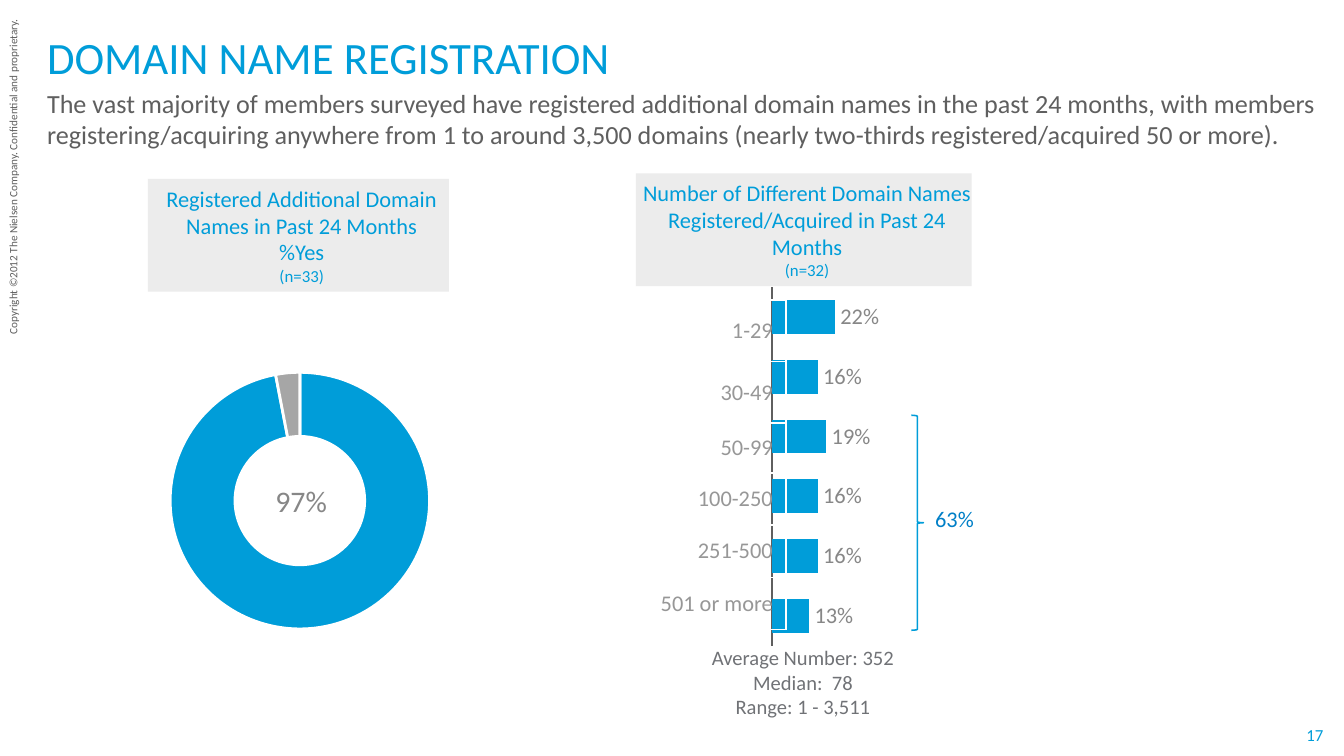
"""Build the domain name registration slide."""
from lxml.etree import SubElement
from pptx import Presentation
from pptx.chart.data import CategoryChartData as ChartData
from pptx.dml.color import RGBColor
from pptx.enum.chart import XL_CHART_TYPE as ChartKind, XL_LABEL_POSITION as LabelSpot
from pptx.enum.chart import XL_TICK_LABEL_POSITION as TickLabel, XL_TICK_MARK as TickMark
from pptx.enum.shapes import MSO_SHAPE as Shape
from pptx.enum.text import MSO_ANCHOR as Anchor, MSO_AUTO_SIZE as AutoSize, PP_ALIGN as Align
from pptx.oxml.ns import qn
from pptx.util import Pt

COLORS = {"blue": "009DD9", "deep": "007FC7", "text": "5F5F5F", "note": "707276",
          "label": "979797", "value": "878787", "rest": "A6A6A6", "panel": "ECECEC",
          "white": "FFFFFF"}


class SlideBuilder:
    """Holds the style and the current slide."""

    def __init__(self, slide, font="Calibri"):
        self.slide, self.shapes, self.font = slide, slide.shapes, font

    def color(self, name):
        return RGBColor.from_string(COLORS[name])

    def style(self, font, size, color):
        for key, value in {"name": self.font, "size": Pt(size), "bold": False}.items():
            setattr(font, key, value)
        font.color.rgb = self.color(color)

    def paint(self, target, color):
        target.fill.solid()
        target.fill.fore_color.rgb = self.color(color)

    def set_lines(self, frame, lines, color, align=Align.LEFT, anchor=Anchor.TOP,
                  margins=(7.2, 3.6, 7.2, 3.6)):
        left, top, right, bottom = map(Pt, margins)
        settings = {"word_wrap": True, "auto_size": AutoSize.NONE, "vertical_anchor": anchor,
                    "margin_left": left, "margin_top": top,
                    "margin_right": right, "margin_bottom": bottom}
        for key, value in settings.items():
            setattr(frame, key, value)
        for index, (text, size) in enumerate(lines):
            para = frame.add_paragraph() if index else frame.paragraphs[0]
            para.alignment, para.space_before = align, Pt(0)
            span = para.add_run()
            span.text = text
            self.style(span.font, size, color)

    def placeholder(self, index, place, text, size, color, anchor):
        holder = self.slide.placeholders[index]
        for key, value in zip(("left", "top", "width", "height"), place):
            setattr(holder, key, Pt(value))
        self.set_lines(holder.text_frame, [(text, size)], color, anchor=anchor,
                       margins=(7.2, 0, 7.2, 0))
        properties = holder.text_frame.paragraphs[0]._p.get_or_add_pPr()
        for key in ("marL", "indent"):
            properties.set(key, "0")
        SubElement(properties, qn("a:buNone"))

    def text(self, place, lines, color, rotation=0, **layout):
        box = self.shapes.add_textbox(*map(Pt, place))
        box.rotation = rotation
        self.set_lines(box.text_frame, lines, color, **layout)

    def panel(self, place, lines):
        box = self.shapes.add_shape(Shape.RECTANGLE, *map(Pt, place))
        box.shadow.inherit = False
        self.paint(box, "panel")
        box.line.fill.background()
        self.set_lines(box.text_frame, lines, "blue", Align.CENTER, Anchor.MIDDLE,
                       (3.6, 0, 0, 0))

    def brace(self, place):
        brace = self.shapes.add_shape(Shape.RIGHT_BRACE, *map(Pt, place))
        brace.shadow.inherit = False
        brace.fill.background()
        brace.line.color.rgb = self.color("blue")
        brace.line.width = Pt(0.85)

    def chart(self, kind, place, categories, values, number_format, plot_area):
        data = ChartData(number_format=number_format)
        data.categories = categories
        data.add_series("Series 1", values)
        chart = self.shapes.add_chart(kind, *map(Pt, place), data).chart
        chart.has_legend = chart.has_title = False
        self.style(chart.font, 10, "text")
        area = chart._chartSpace.chart.plotArea
        for old in area.findall(qn("c:layout")):
            area.remove(old)
        layout = SubElement(area, qn("c:layout"))
        area.insert(0, layout)
        manual = SubElement(layout, qn("c:manualLayout"))
        entries = [("layoutTarget", "inner"), ("xMode", "edge"), ("yMode", "edge")]
        for tag, value in entries + list(zip("xywh", plot_area)):
            SubElement(manual, qn(f"c:{tag}")).set("val", str(value))
        return chart

    def doughnut(self, place, categories, values, colors):
        chart = self.chart(ChartKind.DOUGHNUT, place, categories, values, "0",
                           (0.15, 0, 0.69, 1))
        plot = chart.plots[0]
        plot.has_data_labels = False
        plot._element.find(qn("c:holeSize")).set("val", "55")
        for index, color in enumerate(colors):
            point = plot.series[0].points[index].format
            self.paint(point, color)
            point.line.color.rgb = self.color("white")
            point.line.width = Pt(1.5)

    def bars(self, place, categories, values):
        chart = self.chart(ChartKind.BAR_CLUSTERED, place, categories, values, "0%",
                           (0.02, 0.02, 0.97, 0.96))
        plot = chart.plots[0]
        for key, value in {"gap_width": 78, "overlap": 65, "vary_by_categories": False,
                           "has_data_labels": True}.items():
            setattr(plot, key, value)
        self.paint(plot.series[0].format, "blue")
        for key, value in {"show_value": True, "number_format": "0%",
                           "number_format_is_linked": False,
                           "position": LabelSpot.OUTSIDE_END}.items():
            setattr(plot.data_labels, key, value)
        self.style(plot.data_labels.font, 12, "value")
        for key, value in {"visible": False, "minimum_scale": 0, "maximum_scale": 1,
                           "has_major_gridlines": False}.items():
            setattr(chart.value_axis, key, value)
        axis = chart.category_axis
        for key, value in {"tick_label_position": TickLabel.NONE,
                           "major_tick_mark": TickMark.NONE,
                           "minor_tick_mark": TickMark.NONE}.items():
            setattr(axis, key, value)
        axis.format.line.color.rgb = self.color("text")
        axis.format.line.width = Pt(0.75)

    def label_table(self, place, labels, heights):
        table = self.shapes.add_table(len(labels), 1, *map(Pt, place)).table
        table.first_row = table.horz_banding = False
        for row, label, height in zip(table.rows, labels, heights):
            row.height = Pt(height)
            cell = row.cells[0]
            cell.fill.background()
            cell.vertical_anchor = Anchor.MIDDLE
            para = cell.text_frame.paragraphs[0]
            para.alignment = Align.RIGHT
            span = para.add_run()
            span.text = label
            self.style(span.font, 12, "label")


def main():
    deck = Presentation()
    deck.slide_width, deck.slide_height = Pt(720), Pt(405)
    page = SlideBuilder(deck.slides.add_slide(deck.slide_layouts[1]))
    centered = {"align": Align.CENTER, "anchor": Anchor.MIDDLE, "margins": (0, 0, 0, 0)}

    page.text((-86, 86, 186, 14.4),
              [("Copyright ©2012 The Nielsen Company. Confidential and proprietary.", 6)],
              "text", rotation=270, margins=(7.2, 3.6, 0, 3.6))
    page.text((699, 388, 11, 11), [("17", 9)], "blue", **centered)
    page.placeholder(0, (18, 10.8, 643, 33.8), "DOMAIN NAME REGISTRATION", 24, "blue",
                     Anchor.BOTTOM)
    page.placeholder(1, (18, 46.8, 702, 32.4),
                     "The vast majority of members surveyed have registered additional domain "
                     "names in the past 24 months, with members registering/acquiring anywhere "
                     "from 1 to around 3,500 domains (nearly two-thirds registered/acquired 50 "
                     "or more).", 14, "text", Anchor.TOP)

    page.panel((79.2, 95.8, 161.3, 60.5),
               [("Registered Additional Domain Names in Past 24 Months", 12),
                ("%Yes", 12), ("(n=33)", 9)])
    page.doughnut((59.8, 198.7, 203.8, 139), ["Yes", "No"], [97, 3], ["blue", "rest"])
    page.text((132.5, 245, 54, 46.8), [("97%", 16)], "value",
              **{**centered, "margins": (3.6, 0, 0, 0)})

    ranges = ["1-29", "30-49", "50-99", "100-250", "251-500", "501 or more"]
    page.bars((410.4, 149.8, 158.4, 200.2), ["1", "2", "3", "4", "5", "6"],
              [0.13, 0.16, 0.16, 0.19, 0.16, 0.22])
    page.label_table((238.3, 160.6, 182.9, 177.1), ranges, [33.1, 33.1, 26.6, 28, 28, 28])
    page.panel((340.6, 92.9, 180, 60.5),
               [("Number of Different Domain Names Registered/Acquired in Past 24 Months", 12),
                ("(n=32)", 9)])
    page.text((346.3, 342, 167.8, 47.5),
              [("Average Number: 352", 11), ("Median:  78", 11), ("Range: 1 - 3,511", 11)],
              "note", align=Align.CENTER)
    page.brace((488.2, 222.5, 6.5, 115.2))
    page.text((493.9, 267.1, 48.2, 21.6), [("63%", 12)], "deep")
    deck.save("out.pptx")


if __name__ == "__main__":
    main()
